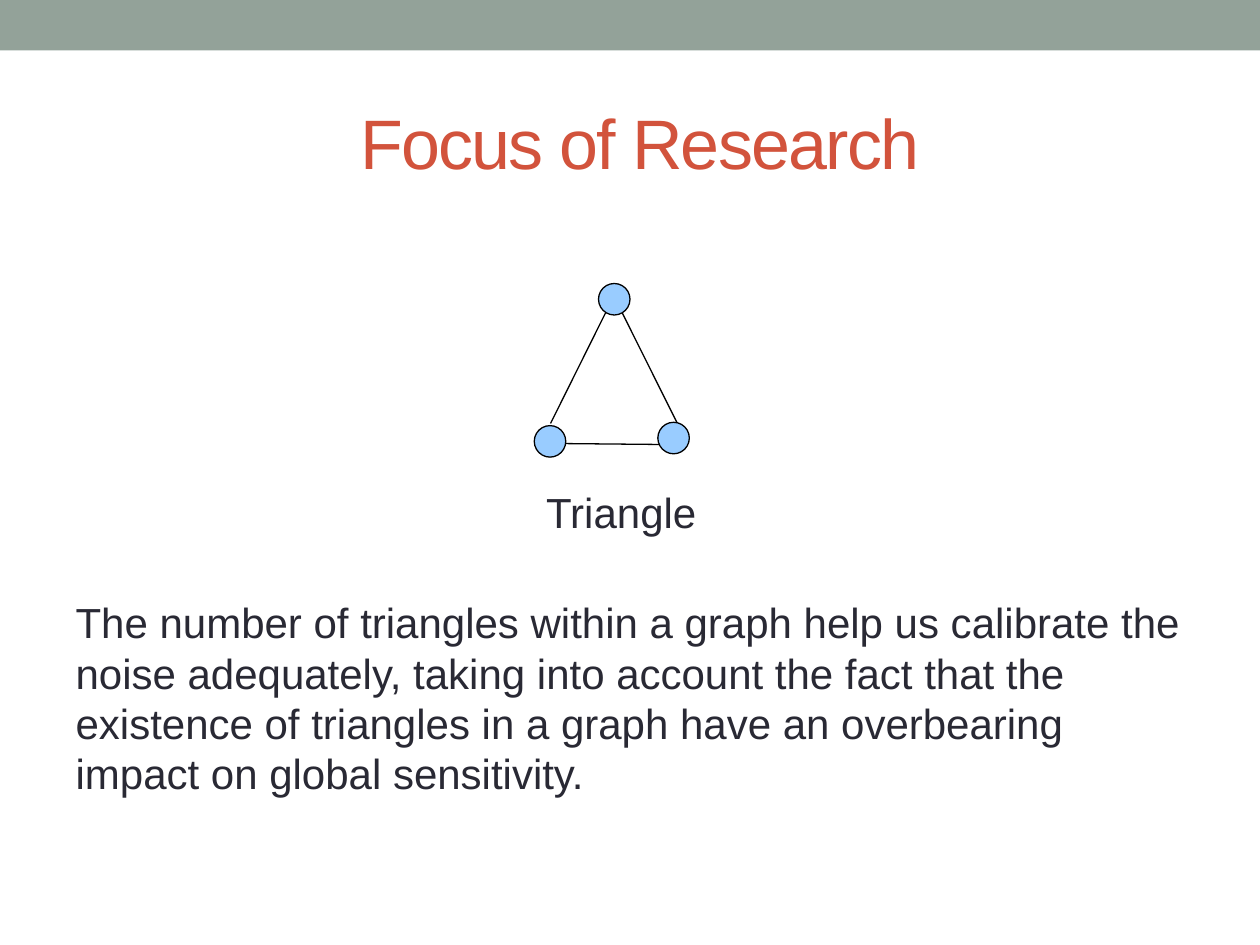
from lxml import etree
from pptx import Presentation
from pptx.dml.color import RGBColor
from pptx.enum import shapes, text
from pptx.oxml import ns
from pptx.util import Pt

SAGE = RGBColor(0x93, 0xA2, 0x99)
RUST = RGBColor(0xD2, 0x53, 0x3C)
INK = RGBColor(0x29, 0x29, 0x34)
SKY = RGBColor(0x99, 0xCC, 0xFF)
BLACK = RGBColor(0, 0, 0)


def format_runs(paragraph, size, color):
    for run in paragraph.runs:
        run.font.name = "Arial"
        run.font.size = Pt(size)
        run.font.color.rgb = color


prs = Presentation()
prs.slide_width, prs.slide_height = Pt(720), Pt(540)
slide = prs.slides.add_slide(prs.slide_layouts[1])

banner = slide.shapes.add_shape(shapes.MSO_SHAPE.RECTANGLE, 0, 0, Pt(720), Pt(28.8))
banner.shadow.inherit = False
banner.fill.solid()
banner.fill.fore_color.rgb = SAGE
banner.line.fill.background()

# Title
title = slide.shapes.title
title.left, title.top, title.width, title.height = Pt(41.6), Pt(41.8), Pt(648), Pt(77.8)
title.text_frame.text = "Focus of Research"
title.text_frame.vertical_anchor = text.MSO_ANCHOR.MIDDLE
title.text_frame.auto_size = text.MSO_AUTO_SIZE.NONE
heading = title.text_frame.paragraphs[0]
heading.alignment = text.PP_ALIGN.CENTER
format_runs(heading, 40, RUST)
heading.runs[0].font._element.set("spc", "-100")

# Caption and explanation, below the room kept for the graph
body = slide.placeholders[1]
body.left, body.top, body.width, body.height = Pt(36), Pt(126), Pt(648), Pt(384)
frame = body.text_frame
frame.text = (
    "Triangle\n"
    "The number of triangles within a graph help us calibrate the noise "
    "adequately, taking into account the fact that the existence of triangles "
    "in a graph have an overbearing impact on global sensitivity."
)
frame.auto_size = text.MSO_AUTO_SIZE.NONE
frame.margin_top = Pt(152.2)
frame.margin_right = 0
caption, explanation = frame.paragraphs
for paragraph, right_indent in ((caption, 17.2), (explanation, 0)):
    paragraph.line_spacing = 1.0
    paragraph.space_before = Pt(0)
    format_runs(paragraph, 24, INK)
    properties = paragraph._p.get_or_add_pPr()
    properties.set("marL", "0")
    properties.set("marR", str(Pt(right_indent)))
    properties.set("indent", "0")
    etree.SubElement(properties, ns.qn("a:buNone"))
caption.alignment = text.PP_ALIGN.CENTER
explanation.alignment = text.PP_ALIGN.LEFT
explanation.space_before = Pt(34)

# Triangle graph: edges first, nodes on top
edges = [
    (314.6, 242, 350.8, 169.2),
    (350.8, 169.2, 386.8, 241.4),
    (323.3, 253.5, 377.3, 254),
]
for ends in edges:
    edge = slide.shapes.add_connector(
        shapes.MSO_CONNECTOR.STRAIGHT, *(Pt(value) for value in ends)
    )
    edge.line.color.rgb = BLACK
    edge.line.width = Pt(0.75)
    etree.SubElement(edge._element.spPr, ns.qn("a:effectLst"))

for left, top in [(342, 162), (305.3, 243.2), (375.9, 241.3)]:
    node = slide.shapes.add_shape(
        shapes.MSO_SHAPE.OVAL, Pt(left), Pt(top), Pt(18), Pt(18)
    )
    node.shadow.inherit = False
    node.fill.solid()
    node.fill.fore_color.rgb = SKY
    node.line.color.rgb = BLACK
    node.line.width = Pt(0.75)

prs.save("out.pptx")
